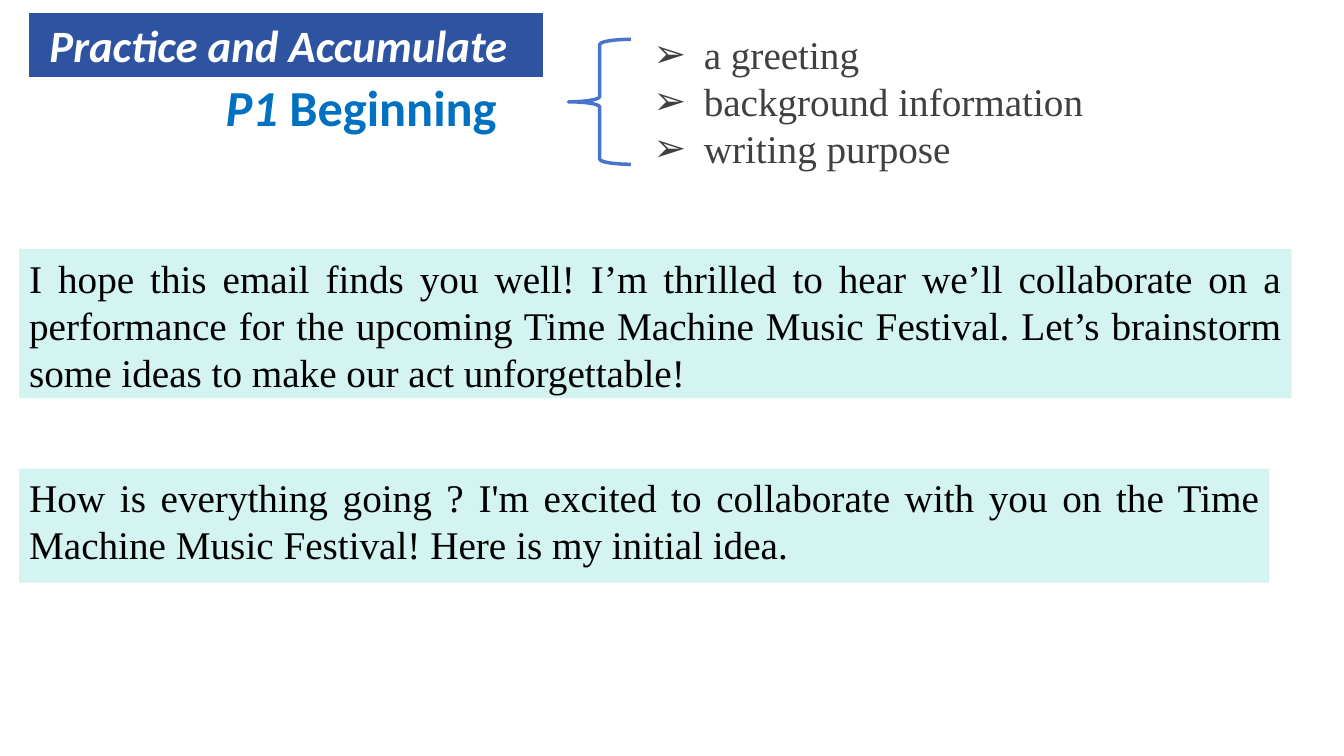
from pptx import Presentation
from pptx.dml.color import RGBColor
from pptx.enum.shapes import MSO_SHAPE
from pptx.enum.text import MSO_ANCHOR, MSO_AUTO_SIZE, PP_ALIGN
from pptx.oxml.ns import qn
from pptx.util import Inches, Pt

SERIF = {"name": "Times New Roman", "size": Pt(28), "bold": False}
SANS = {"name": "Calibri", "bold": True}


def colour(value):
    """Turn a hex string into a colour."""
    return RGBColor.from_string(value)


class Board:
    """Hold the style and the current slide; places are percent of its size."""

    ink, grey, white = "000000", "404040", "FFFFFF"
    navy, blue, brace_blue, mint = "2E54A1", "0070C0", "4874CB", "D4F4F2"

    def __init__(self, deck):
        self.deck = deck
        self.page = deck.slides.add_slide(deck.slide_layouts[1])

    def area(self, left, top, width, height):
        """Convert percent shares to slide lengths."""
        across, down = self.deck.slide_width, self.deck.slide_height
        return [round(share * full / 100) for share, full in
                zip((left, top, width, height), (across, down, across, down))]

    def move(self, box, place):
        """Put a placeholder at a place."""
        for name, value in zip(("left", "top", "width", "height"), self.area(*place)):
            setattr(box, name, value)

    def paint(self, box, fill=None, line=None, weight=0.75):
        """Set the fill and outline of a box."""
        if fill:
            box.fill.solid()
            box.fill.fore_color.rgb = colour(fill)
        else:
            box.fill.background()
        if line:
            box.line.color.rgb = colour(line)
            box.line.width = Pt(weight)
        else:
            box.line.fill.background()

    def set_text(self, box, lines, style, tint, align=PP_ALIGN.LEFT, bullet=None):
        """Fill a box with paragraphs, each a list of text and format pairs."""
        frame = box.text_frame
        settings = {"word_wrap": True, "auto_size": MSO_AUTO_SIZE.NONE,
                    "vertical_anchor": MSO_ANCHOR.TOP}
        for name, value in settings.items():
            setattr(frame, name, value)
        for index, spans in enumerate(lines):
            para = frame.add_paragraph() if index else frame.paragraphs[0]
            for name, value in {"alignment": align, "line_spacing": 1.0,
                                "space_before": Pt(0)}.items():
                setattr(para, name, value)
            if bullet:
                self.mark(para, bullet)
            for text, extra in spans:
                span = para.add_run()
                span.text = text
                for name, value in {**style, **extra}.items():
                    setattr(span.font, name, value)
                span.font.color.rgb = colour(tint)

    def mark(self, para, bullet):
        """Give a paragraph a hanging bullet."""
        properties = para._p.get_or_add_pPr()
        properties.set("marL", str(Inches(0.5)))
        properties.set("indent", str(-Inches(0.5)))
        element = properties.makeelement(qn("a:buChar"), {"char": bullet})
        properties.append(element)

    def banner(self, text, place):
        """Show the title as a filled banner."""
        box = self.page.shapes.title
        self.move(box, place)
        self.paint(box, self.navy, self.navy)
        box.text_frame.margin_left = Inches(0.2)
        self.set_text(box, [[(text, {"size": Pt(32), "italic": True})]], SANS, self.white)

    def points(self, items, place):
        """Show the bulleted list."""
        box = self.page.placeholders[1]
        self.move(box, place)
        self.set_text(box, [[(item, {})] for item in items], SERIF, self.grey, bullet="➢")

    def heading(self, spans, place):
        """Add a large heading."""
        box = self.page.shapes.add_textbox(*self.area(*place))
        self.set_text(box, [spans], {**SANS, "size": Pt(36)}, self.blue)

    def shape(self, kind, place, **paint):
        """Add a preset shape without shadow."""
        box = self.page.shapes.add_shape(kind, *self.area(*place))
        box.shadow.inherit = False
        self.paint(box, **paint)
        return box

    def brace(self, place):
        """Add the brace that gathers the list."""
        self.shape(MSO_SHAPE.LEFT_BRACE, place, line=self.brace_blue, weight=2.5)

    def sample(self, text, place):
        """Add a tinted sample passage."""
        box = self.shape(MSO_SHAPE.RECTANGLE, place, fill=self.mint)
        self.set_text(box, [[(text, {})]], SERIF, self.ink, PP_ALIGN.JUSTIFY)


def main():
    """Build and save the slide."""
    deck = Presentation()
    deck.slide_width, deck.slide_height = Inches(13.33), Inches(7.5)
    board = Board(deck)
    board.banner("Practice and Accumulate", (2.18, 1.73, 38.18, 8.4))
    board.heading([("P1", {"italic": True}), (" Beginning", {"italic": False})],
                  (16.05, 9.47, 30.9, 8))
    board.brace((42.3, 5.2, 4.65, 16.53))
    board.points(["a greeting", "background information", "writing purpose"],
                 (47.86, 3.33, 52.14, 20.13))
    board.sample("I hope this email finds you well! I’m thrilled to hear we’ll "
                 "collaborate on a performance for the upcoming Time Machine Music "
                 "Festival. Let’s brainstorm some ideas to make our act unforgettable!",
                 (1.43, 32.93, 94.67, 19.73))
    board.sample("How is everything going ? I'm excited to collaborate with you on "
                 "the Time Machine Music Festival! Here is my initial idea.",
                 (1.43, 62, 93.02, 15.07))
    deck.save("out.pptx")


if __name__ == "__main__":
    main()
